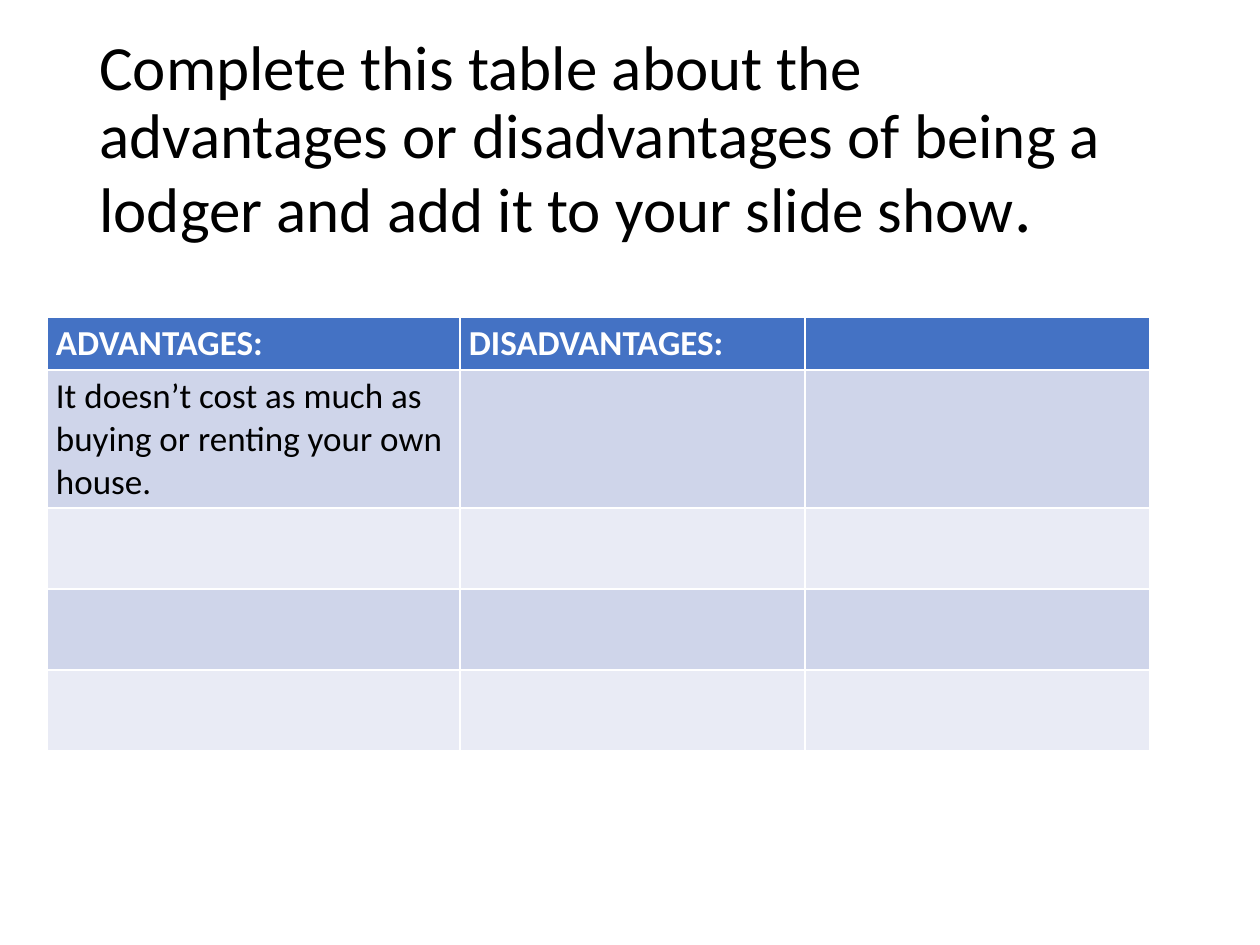
from dataclasses import dataclass

from pptx import Presentation
from pptx import util as u
from pptx.dml.color import RGBColor
from pptx.enum import text

EMU_PER_PX = 914400 / 126


@dataclass(frozen=True)
class Theme:
    font: str = "Calibri"
    dark: str = "000000"
    light: str = "FFFFFF"
    header: str = "4472C4"
    bands: tuple = ("CFD5EA", "E9EBF5")
    title_size: float = 36
    stop_size: float = 39.6
    cell_size: float = 20


THEME = Theme()
TITLE = (
    "Complete this table about the advantages or disadvantages "
    "of being a lodger and add it to your slide show"
)
ROWS = [
    ["ADVANTAGES:", "DISADVANTAGES:", ""],
    ["It doesn’t cost as much as buying or renting your own house.", "", ""],
    ["", "", ""],
    ["", "", ""],
    ["", "", ""],
]
COLUMN_WIDTHS = [413, 345, 345]
ROW_HEIGHTS = [53, 138, 81, 81, 81]


def px(length):
    return u.Emu(round(length * EMU_PER_PX))


def style_font(font, color, bold=False):
    font.name = THEME.font
    font.bold = bold
    font.color.rgb = RGBColor.from_string(color)


def add_title(page, left, top, width, height):
    box = page.shapes.add_textbox(px(left), px(top), px(width), px(height))
    frame = box.text_frame
    frame.word_wrap = True
    frame.vertical_anchor = text.MSO_ANCHOR.MIDDLE
    para = frame.paragraphs[0]
    para.line_spacing = 0.9
    style_font(para.font, THEME.dark)
    for words, size in ((TITLE, THEME.title_size), (".", THEME.stop_size)):
        span = para.add_run()
        span.text = words
        span.font.size = u.Pt(size)


def fill_cell(cell, words, fill, color, bold):
    cell.fill.solid()
    cell.fill.fore_color.rgb = RGBColor.from_string(fill)
    cell.margin_left = cell.margin_right = px(9)
    cell.margin_top = cell.margin_bottom = px(5)
    para = cell.text_frame.paragraphs[0]
    para.text = words
    para.font.size = u.Pt(THEME.cell_size)
    style_font(para.font, color, bold)


def add_comparison(page, left, top):
    """Place the table; its default style draws the white cell borders."""
    table = page.shapes.add_table(
        len(ROWS), len(COLUMN_WIDTHS), px(left), px(top),
        px(sum(COLUMN_WIDTHS)), px(sum(ROW_HEIGHTS)),
    ).table
    for column, width in zip(table.columns, COLUMN_WIDTHS):
        column.width = px(width)
    for index, (row, height) in enumerate(zip(table.rows, ROW_HEIGHTS)):
        row.height = px(height)
        is_header = index == 0
        fill = THEME.header if is_header else THEME.bands[(index - 1) % 2]
        color = THEME.light if is_header else THEME.dark
        for cell, words in zip(row.cells, ROWS[index]):
            fill_cell(cell, words, fill, color, is_header)


def main():
    deck = Presentation()
    deck.slide_width, deck.slide_height = px(1260), px(945)
    page = deck.slides.add_slide(deck.slide_layouts[6])
    add_title(page, 87, 50, 1086, 183)
    add_comparison(page, 47, 317)
    deck.save("out.pptx")


if __name__ == "__main__":
    main()
